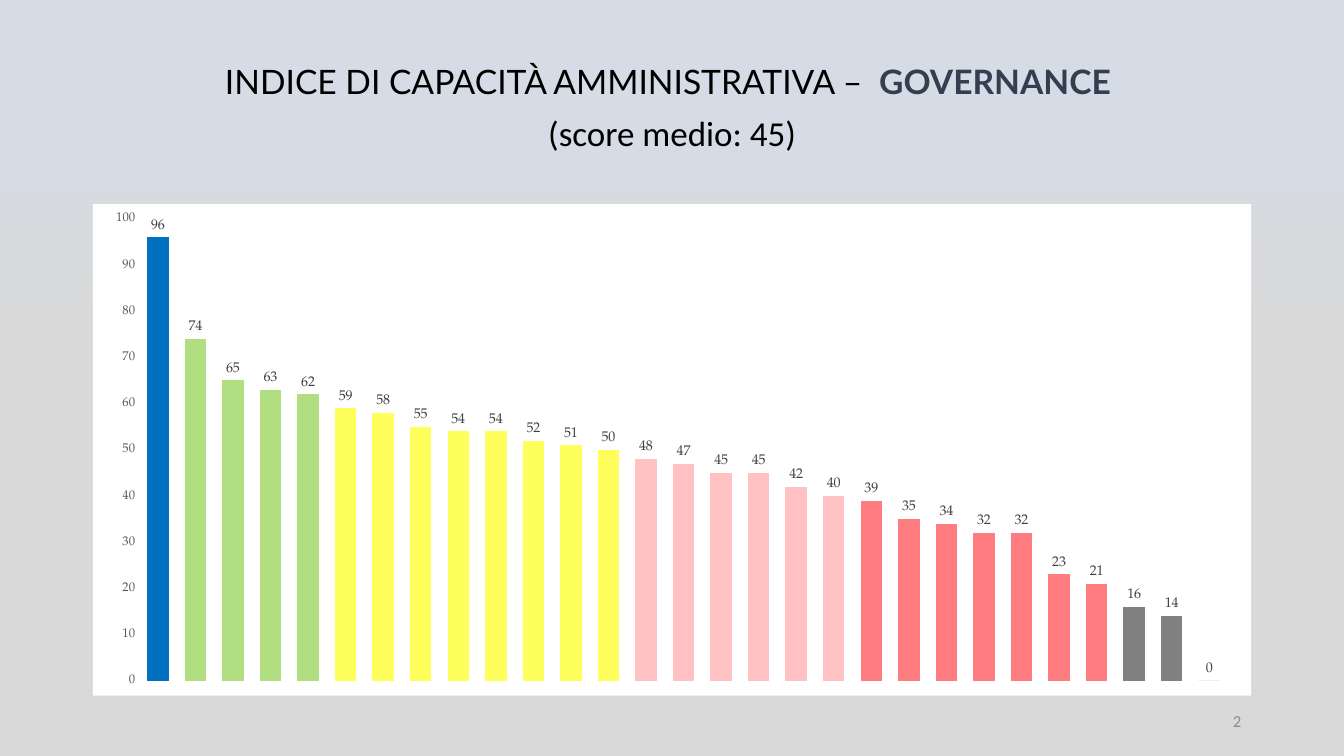
from dataclasses import dataclass

import lxml.etree
import pptx
import pptx.chart.data
import pptx.dml.color
import pptx.enum.chart
import pptx.enum.text
import pptx.oxml
import pptx.oxml.ns
import pptx.util

DRAWING = 'xmlns:a="http://schemas.openxmlformats.org/drawingml/2006/main"'
CHART = 'xmlns:c="http://schemas.openxmlformats.org/drawingml/2006/chart"'
PRESENTATION = 'xmlns:p="http://schemas.openxmlformats.org/presentationml/2006/main"'

WIDTH, HEIGHT = 13.33, 7.5
MARGIN = 0.92 / WIDTH
CONTENT = 1 - 2 * MARGIN

SCORES = [96, 74, 65, 63, 62, 59, 58, 55, 54, 54, 52, 51, 50, 48, 47,
          45, 45, 42, 40, 39, 35, 34, 32, 32, 23, 21, 16, 14, 0]


@dataclass(frozen=True)
class Theme:
    title_font: str = "Lato"
    body_font: str = "Calibri"
    chart_font: str = "TeX Gyre Pagella"
    title_size: int = 24
    subtitle_size: int = 25
    number_size: int = 12
    label_size: int = 10
    axis_size: int = 9
    text: str = "000000"
    accent: str = "333F50"
    number: str = "8C8C8C"
    label: str = "404040"
    axis: str = "595959"
    panel: str = "FFFFFF"
    background: tuple = ((0, "D6DCE5"), (15, "D6DCE5"), (45, "D9D9D9"))
    # Lowest score of each band, with the colour of its columns
    bands: tuple = ((80, "0070C0"), (60, "B2DE82"), (50, "FFFF5B"),
                    (40, "FFC1C1"), (20, "FF7C80"), (0, "808080"))


THEME = Theme()


def place(left, top, width, height):
    """Turn shares of the slide's size into lengths."""
    return (pptx.util.Inches(left * WIDTH), pptx.util.Inches(top * HEIGHT),
            pptx.util.Inches(width * WIDTH), pptx.util.Inches(height * HEIGHT))


def style_font(font, name, size, color, bold=False):
    font.name = name
    font.size = pptx.util.Pt(size)
    font.bold = bold
    font.color.rgb = pptx.dml.color.RGBColor.from_string(color)


def set_background(slide):
    stops = "".join(
        f'<a:gs pos="{share * 1000}"><a:srgbClr val="{color}"/></a:gs>'
        for share, color in THEME.background)
    background = pptx.oxml.parse_xml(
        f'<p:bg {PRESENTATION} {DRAWING}><p:bgPr><a:gradFill rotWithShape="1">'
        f'<a:gsLst>{stops}</a:gsLst><a:lin ang="5400000" scaled="0"/>'
        '</a:gradFill><a:effectLst/></p:bgPr></p:bg>')
    slide.element.cSld.insert(0, background)


def add_text(slide, area, lines, alignment, space_after, line_spacing=1.0):
    """Each line is a list of (text, font name, size, colour, bold) runs."""
    frame = slide.shapes.add_textbox(*place(*area)).text_frame
    frame.word_wrap = True
    frame.vertical_anchor = pptx.enum.text.MSO_ANCHOR.MIDDLE
    for index, runs in enumerate(lines):
        paragraph = frame.add_paragraph() if index else frame.paragraphs[0]
        paragraph.alignment = alignment
        paragraph.line_spacing = line_spacing
        paragraph.space_after = pptx.util.Pt(space_after)
        for text, *style in runs:
            run = paragraph.add_run()
            run.text = text
            style_font(run.font, *style)


def band_color(score):
    return next(color for lowest, color in THEME.bands if score >= lowest)


def set_panel(chart):
    """Give the chart a white ground and fix its plot area."""
    panel = pptx.oxml.parse_xml(
        f'<c:spPr {CHART} {DRAWING}><a:solidFill><a:srgbClr val="{THEME.panel}"/>'
        '</a:solidFill><a:ln><a:noFill/></a:ln></c:spPr>')
    chart.element.find(pptx.oxml.ns.qn("c:chart")).addnext(panel)

    plot_area = chart.element.find(".//" + pptx.oxml.ns.qn("c:plotArea"))
    for layout in plot_area.findall(pptx.oxml.ns.qn("c:layout")):
        plot_area.remove(layout)
    layout = pptx.oxml.parse_xml(f'<c:layout {CHART}><c:manualLayout/></c:layout>')
    settings = {"layoutTarget": "inner", "xMode": "edge", "yMode": "edge",
                "x": 0.04, "y": 0.03, "w": 0.94, "h": 0.94}
    for name, value in settings.items():
        lxml.etree.SubElement(layout[0], pptx.oxml.ns.qn(f"c:{name}"),
                              val=str(value))
    plot_area.insert(0, layout)


def style_axes(chart):
    chart.category_axis.visible = False
    axis = chart.value_axis
    axis.minimum_scale, axis.maximum_scale, axis.major_unit = 0, 100, 10
    axis.has_major_gridlines = False
    axis.major_tick_mark = pptx.enum.chart.XL_TICK_MARK.NONE
    axis.minor_tick_mark = pptx.enum.chart.XL_TICK_MARK.NONE
    axis.format.line.fill.background()
    style_font(axis.tick_labels.font, THEME.chart_font, THEME.axis_size, THEME.axis)


def add_score_chart(slide, area):
    data = pptx.chart.data.CategoryChartData()
    data.categories = [str(rank) for rank in range(1, len(SCORES) + 1)]
    data.add_series("Series 1", SCORES)
    chart = slide.shapes.add_chart(
        pptx.enum.chart.XL_CHART_TYPE.COLUMN_CLUSTERED, *place(*area), data).chart
    chart.has_legend = False
    chart.has_title = False
    style_font(chart.font, THEME.chart_font, THEME.label_size, THEME.text)
    set_panel(chart)
    style_axes(chart)

    plot = chart.plots[0]
    plot.gap_width = 75
    plot.vary_by_categories = False
    series = plot.series[0]
    for index, score in enumerate(SCORES):
        fill = series.points[index].format.fill
        fill.solid()
        fill.fore_color.rgb = pptx.dml.color.RGBColor.from_string(band_color(score))

    labels = series.data_labels
    labels.show_value = True
    labels.position = pptx.enum.chart.XL_LABEL_POSITION.OUTSIDE_END
    style_font(labels.font, THEME.chart_font, THEME.label_size, THEME.label)


def main():
    presentation = pptx.Presentation()
    presentation.slide_width = pptx.util.Inches(WIDTH)
    presentation.slide_height = pptx.util.Inches(HEIGHT)
    slide = presentation.slides.add_slide(presentation.slide_layouts[6])
    set_background(slide)

    align = pptx.enum.text.PP_ALIGN
    number = [("2", THEME.body_font, THEME.number_size, THEME.number)]
    add_text(slide, (1 - MARGIN - 0.225, 0.927, 0.225, 0.053), [number],
             align.RIGHT, space_after=6)
    add_score_chart(slide, (MARGIN, 0.27, CONTENT, 0.65))
    title = [
        ("INDICE DI CAPACITÀ AMMINISTRATIVA – ", THEME.title_font,
         THEME.title_size, THEME.text),
        (" GOVERNANCE ", THEME.title_font, THEME.title_size, THEME.accent, True),
    ]
    subtitle = [("(score medio: 45)", THEME.body_font, THEME.subtitle_size,
                 THEME.text)]
    add_text(slide, (MARGIN, 0.05, CONTENT, 0.19), [title, subtitle],
             align.CENTER, space_after=10, line_spacing=0.9)
    presentation.save("out.pptx")


if __name__ == "__main__":
    main()
